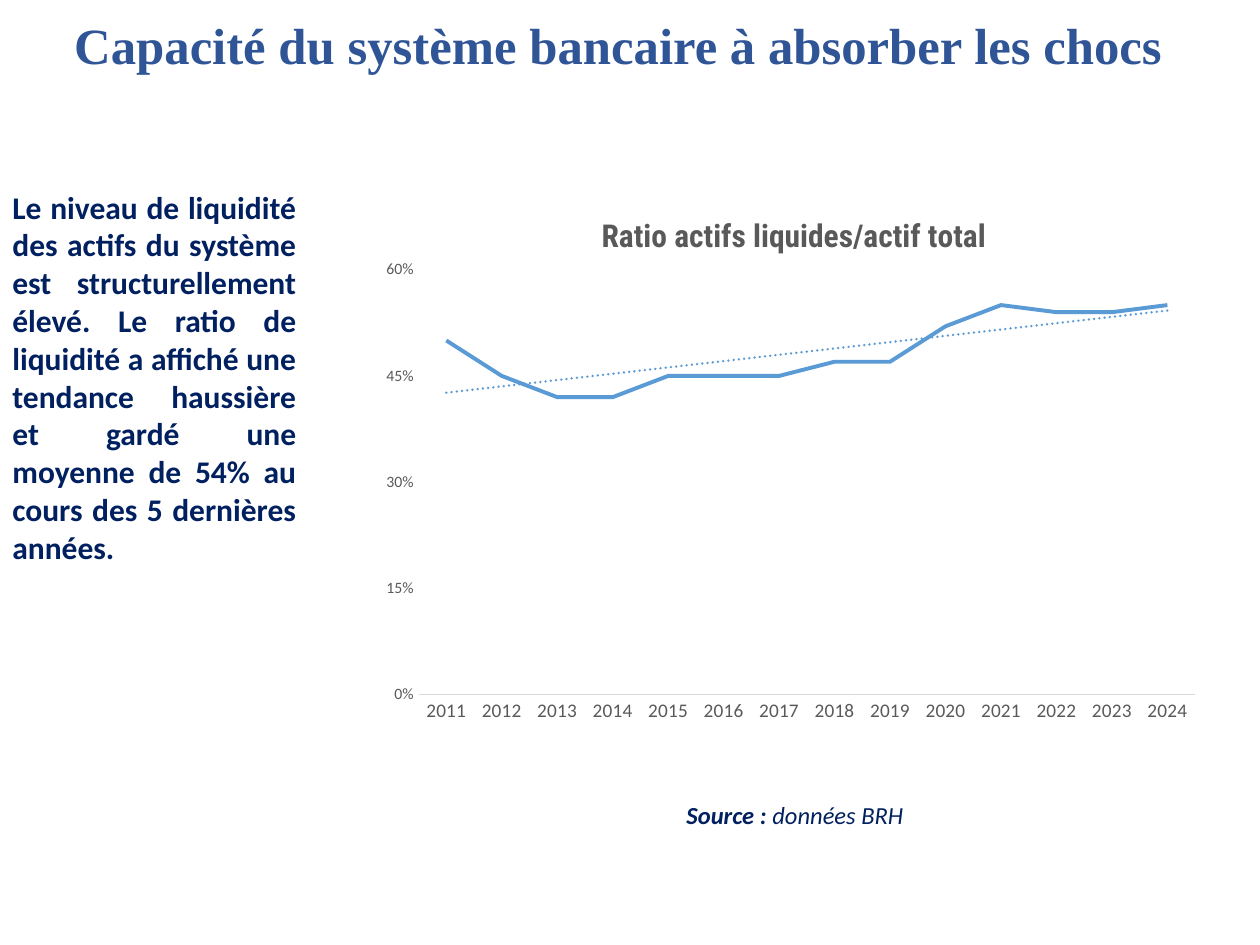
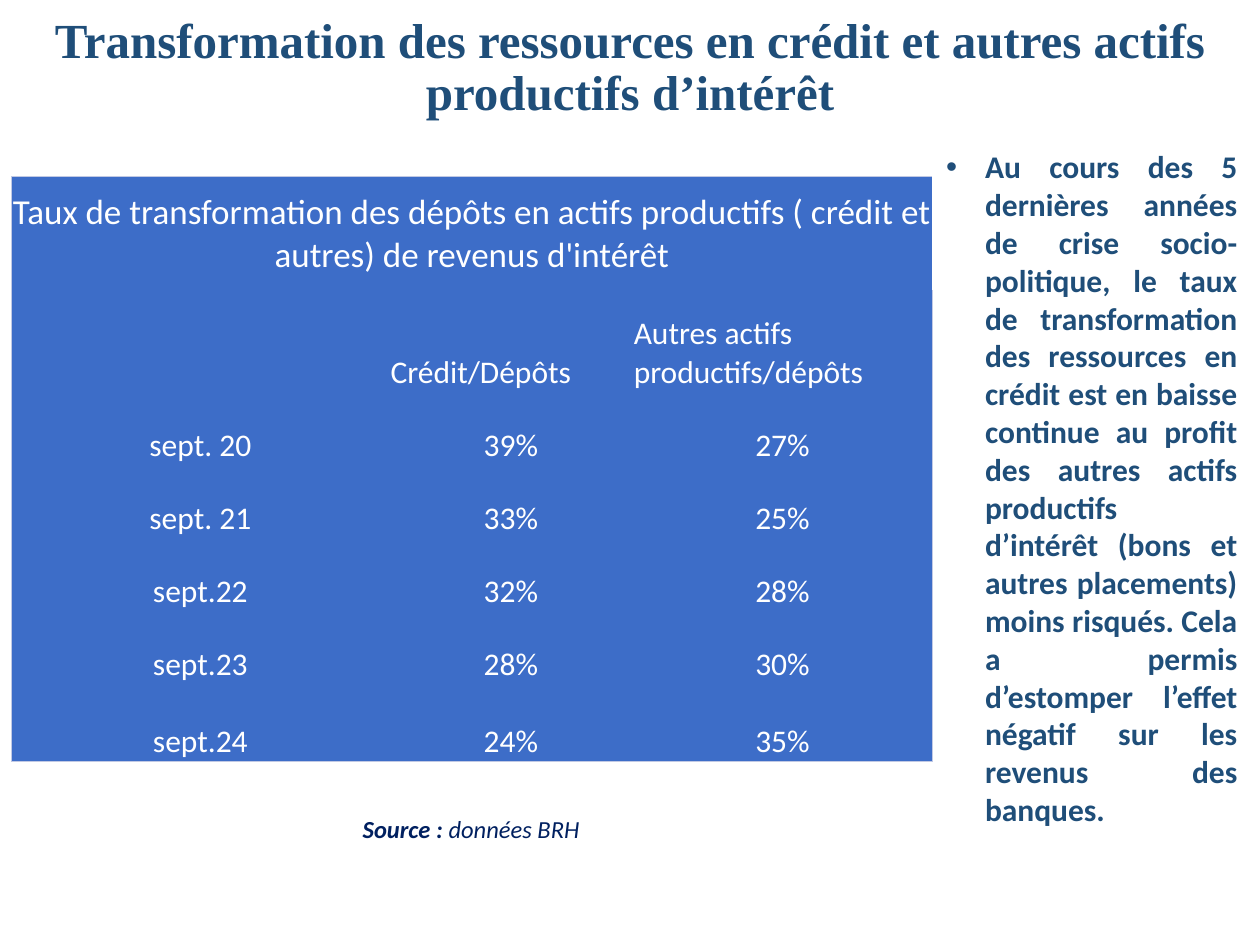
from dataclasses import dataclass

import pptx
import pptx.chart.data
import pptx.dml.color
import pptx.enum.chart
import pptx.enum.text
import pptx.oxml
import pptx.oxml.ns
import pptx.util

ALIGN = pptx.enum.text.PP_ALIGN
ANCHOR = pptx.enum.text.MSO_ANCHOR
CHART = pptx.enum.chart
SCALE = 9144


def px(size):
    return pptx.util.Emu(size * SCALE)


def rgb(code):
    return pptx.dml.color.RGBColor.from_string(code)


def node(xml):
    head, rest = xml.split(">", 1) if not xml.split(">", 1)[0].endswith("/") else (xml[:-2], None)
    names = pptx.oxml.ns.nsdecls("a", "c")
    return pptx.oxml.parse_xml(f"{head} {names}/>" if rest is None else f"{head} {names}>{rest}")


@dataclass(frozen=True)
class Theme:
    body: str = "Calibri"
    serif: str = "Times New Roman"
    narrow: str = "Roboto Condensed"
    blue: str = "2F5597"
    teal: str = "1F4E79"
    navy: str = "002060"
    grey: str = "595959"
    rule: str = "D9D9D9"
    line: str = "5B9BD5"
    cell: str = "3D6DC8"
    edge: str = "C1C9E4"
    white: str = "FFFFFF"
    text: int = 18
    note: int = 14
    large: int = 20
    year: int = 11
    tick: int = 9


class Deck:
    def __init__(self, theme):
        self.theme = theme
        self.file = pptx.Presentation()
        self.file.slide_width, self.file.slide_height = px(1000), px(750)
        self.slide = None

    def page(self):
        self.slide = self.file.slides.add_slide(self.file.slide_layouts[6])

    def style(self, font, size, color, face=None, bold=False, slant=False):
        font.name = face or self.theme.body
        font.size = pptx.util.Pt(size)
        font.color.rgb = rgb(color)
        font.bold, font.italic = bold, slant

    def run(self, para, words, size, color, **look):
        part = para.add_run()
        part.text = words
        self.style(part.font, size, color, **look)

    def box(self, place, align, anchor=ANCHOR.TOP):
        frame = self.slide.shapes.add_textbox(*map(px, place)).text_frame
        frame.word_wrap = True
        frame.vertical_anchor = anchor
        para = frame.paragraphs[0]
        para.alignment = align
        return para

    def title(self, words, place, size, color, align):
        para = self.box(place, align, ANCHOR.MIDDLE)
        para.line_spacing = 0.9
        self.run(para, words, size, color, face=self.theme.serif, bold=True)

    def body(self, words, place, color, indent=0):
        para = self.box(place, ALIGN.JUSTIFY)
        if indent:
            props = para._p.get_or_add_pPr()
            props.set("marL", str(px(indent)))
            props.set("indent", str(-px(indent)))
            props.append(node('<a:buFont typeface="Arial"/>'))
            props.append(node('<a:buChar char="•"/>'))
        self.run(para, words, self.theme.text, color, bold=True)

    def source(self, left, top):
        para = self.box((left, top, 364, 34), ALIGN.LEFT)
        for words, bold in (("Source : ", True), ("données BRH", False)):
            self.run(para, words, self.theme.note, self.theme.navy, bold=bold, slant=True)

    def layout(self, owner, spot, inner=False):
        for old in owner.findall(pptx.oxml.ns.qn("c:layout")):
            owner.remove(old)
        keys = ("x", "y", "w", "h")[:len(spot)]
        marks = '<c:layoutTarget val="inner"/>' if inner else ""
        marks += "".join(f'<c:{key}Mode val="edge"/>' for key in keys[:2])
        marks += "".join(f'<c:{key} val="{val}"/>' for key, val in zip(keys, spot))
        item = node(f"<c:layout><c:manualLayout>{marks}</c:manualLayout></c:layout>")
        if inner:
            owner.insert(0, item)
        else:
            owner.find(pptx.oxml.ns.qn("c:tx")).addnext(item)

    def chart(self, place, name, years, rates):
        theme = self.theme
        data = pptx.chart.data.CategoryChartData(number_format="0%")
        data.categories = years
        data.add_series(name, rates)
        chart = self.slide.shapes.add_chart(
            CHART.XL_CHART_TYPE.LINE, *map(px, place), data).chart
        self.style(chart.font, 10, theme.grey)
        chart.has_legend = False
        chart.has_title = True
        para = chart.chart_title.text_frame.paragraphs[0]
        self.run(para, name, theme.text, theme.grey, face=theme.narrow, bold=True)
        self.layout(chart.chart_title._element, (0.27, 0.05))
        self.layout(chart._chartSpace.chart.plotArea, (0.06, 0.16, 0.92, 0.77), inner=True)

        years_axis, rates_axis = chart.category_axis, chart.value_axis
        for axis, size in ((years_axis, theme.year), (rates_axis, theme.tick)):
            axis.major_tick_mark = axis.minor_tick_mark = CHART.XL_TICK_MARK.NONE
            axis.has_major_gridlines = False
            self.style(axis.tick_labels.font, size, theme.grey)
        years_axis.format.line.color.rgb = rgb(theme.rule)
        years_axis.format.line.width = pptx.util.Pt(0.75)
        rates_axis.format.line.fill.background()
        rates_axis.minimum_scale, rates_axis.maximum_scale = 0, 0.6
        rates_axis.major_unit = 0.15
        rates_axis.tick_labels.number_format = "0%"
        rates_axis.tick_labels.number_format_is_linked = False

        plot = chart.plots[0]
        plot.vary_by_categories = False
        curve = plot.series[0]
        curve.smooth = False
        curve.marker.style = CHART.XL_MARKER_STYLE.NONE
        curve.format.line.color.rgb = rgb(theme.line)
        curve.format.line.width = pptx.util.Pt(2.25)
        trend = node(
            '<c:trendline><c:spPr><a:ln w="19050" cap="rnd"><a:solidFill>'
            f'<a:srgbClr val="{theme.line}"/></a:solidFill><a:prstDash val="sysDot"/>'
            '</a:ln></c:spPr><c:trendlineType val="linear"/><c:dispRSqr val="0"/>'
            '<c:dispEq val="0"/></c:trendline>')
        curve._element.find(pptx.oxml.ns.qn("c:cat")).addprevious(trend)

    def fill(self, cell, words, size, align, anchor, sides):
        theme = self.theme
        cell.margin_left = cell.margin_right = cell.margin_top = px(1)
        cell.margin_bottom = 0
        cell.vertical_anchor = anchor
        props = cell._tc.get_or_add_tcPr()
        for side in sides:
            props.append(node(
                f'<a:ln{side} w="6350"><a:solidFill><a:srgbClr val="{theme.edge}"/>'
                f'</a:solidFill></a:ln{side}>'))
        cell.fill.solid()
        cell.fill.fore_color.rgb = rgb(theme.cell)
        if words:
            para = cell.text_frame.paragraphs[0]
            para.alignment = align
            self.run(para, words, size, theme.white)

    def table(self, place, widths, heights, rows):
        grid = self.slide.shapes.add_table(len(rows), len(widths), *map(px, place)).table
        style = grid._tbl.tblPr.find(pptx.oxml.ns.qn("a:tableStyleId"))
        style.text = "{2D5ABB26-0587-4C30-8999-92F81FD0307C}"
        grid.first_row = grid.horz_banding = False
        for col, width in zip(grid.columns, widths):
            col.width = px(width)
        for row, height in zip(grid.rows, heights):
            row.height = px(height)
        grid.cell(0, 0).merge(grid.cell(0, len(widths) - 1))
        for y, row in enumerate(rows):
            size = self.theme.text if y else self.theme.large
            align = ALIGN.LEFT if y == 1 else ALIGN.CENTER
            anchor = ANCHOR.BOTTOM if y else ANCHOR.MIDDLE
            for x, words in enumerate(row):
                outer = (("L", x == 0), ("R", x == len(row) - 1),
                         ("T", y == 0), ("B", y == len(rows) - 1))
                sides = [side for side, drawn in outer if drawn]
                self.fill(grid.cell(y, x), words, size, align, anchor, sides)


def main():
    theme = Theme()
    deck = Deck(theme)

    deck.page()
    deck.title("Capacité du système bancaire à absorber les chocs",
               (49, 4, 901, 68), 29, theme.blue, ALIGN.JUSTIFY)
    deck.source(535, 630)
    deck.body("Le niveau de liquidité des actifs du système est structurellement élevé. "
              "Le ratio de liquidité a affiché une tendance haussière et gardé une moyenne "
              "de 54% au cours des 5 dernières années.", (0, 144, 245, 313), theme.navy)
    deck.chart((292, 144, 670, 438), "Ratio actifs liquides/actif total",
               [str(year) for year in range(2011, 2025)],
               (0.5, 0.45, 0.42, 0.42, 0.45, 0.45, 0.45,
                0.47, 0.47, 0.52, 0.55, 0.54, 0.54, 0.55))

    deck.page()
    deck.title("Transformation des ressources en crédit et autres actifs productifs d’intérêt",
               (11, 6, 978, 97), 28, theme.teal, ALIGN.CENTER)
    deck.body("Au cours des 5 dernières années de crise socio-politique, le taux de "
              "transformation des ressources en crédit est en baisse continue au profit des "
              "autres actifs productifs d’intérêt (bons et autres placements) moins risqués. "
              "Cela a permis d’estomper l’effet négatif sur les revenus des banques.",
              (741, 112, 251, 555), theme.teal, indent=31)
    deck.source(278, 641)
    deck.table((9, 140, 732, 464), (300, 193, 238), (90, 81, 58, 58, 58, 58, 61), (
        ("Taux de transformation des dépôts en actifs productifs ( crédit et autres) "
         "de revenus d'intérêt", "", ""),
        ("", "Crédit/Dépôts", "Autres actifs productifs/dépôts"),
        ("sept. 20", "39%", "27%"),
        ("sept. 21", "33%", "25%"),
        ("sept.22", "32%", "28%"),
        ("sept.23", "28%", "30%"),
        ("sept.24", "24%", "35%"),
    ))

    deck.file.save("out.pptx")


if __name__ == "__main__":
    main()
